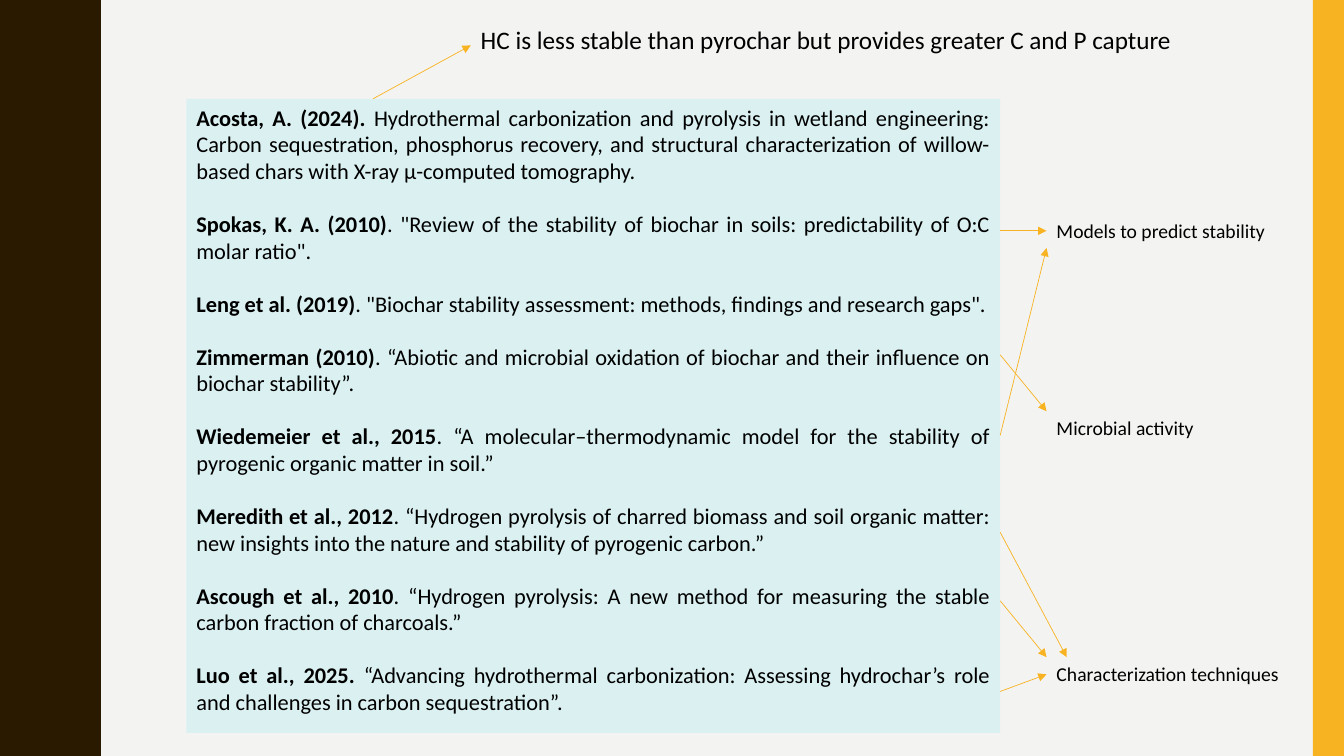
"""Build a slide of biochar stability references linked to their topics."""
from lxml.etree import SubElement
from pptx import Presentation
from pptx.dml.color import RGBColor
from pptx.enum.shapes import MSO_CONNECTOR, MSO_SHAPE
from pptx.enum.text import MSO_ANCHOR, PP_ALIGN
from pptx.oxml.ns import qn
from pptx.util import Inches, Pt

COLORS = {"back": "F3F3F2", "brown": "2A1A00", "gold": "F8B323",
          "panel": "DAF0F1", "text": "000000"}
REFS = [
    ("Acosta, A. (2024). ", "Hydrothermal carbonization and pyrolysis in wetland engineering: Carbon sequestration, phosphorus recovery, and structural characterization of willow-based chars with X-ray μ-computed tomography."),
    ("Spokas, K. A. (2010)", ". \"Review of the stability of biochar in soils: predictability of O:C molar ratio\"."),
    ("Leng et al. (2019)", ". \"Biochar stability assessment: methods, findings and research gaps\"."),
    ("Zimmerman (2010)", ". “Abiotic and microbial oxidation of biochar and their influence on biochar stability”."),
    ("Wiedemeier et al., 2015", ". “A molecular–thermodynamic model for the stability of pyrogenic organic matter in soil.”"),
    ("Meredith et al., 2012", ". “Hydrogen pyrolysis of charred biomass and soil organic matter: new insights into the nature and stability of pyrogenic carbon.”"),
    ("Ascough et al., 2010", ". “Hydrogen pyrolysis: A new method for measuring the stable carbon fraction of charcoals.”"),
    ("Luo et al., 2025. ", "“Advancing hydrothermal carbonization: Assessing hydrochar’s role and challenges in carbon sequestration”."),
]


def write(para, text, size=14, bold=False):
    run = para.add_run()
    run.text = text
    run.font.name = "Calibri"
    run.font.size = Pt(size)
    run.font.bold = bold
    run.font.color.rgb = RGBColor.from_string(COLORS["text"])


def paint(shape, color):
    shape.shadow.inherit = False
    shape.fill.solid()
    shape.fill.fore_color.rgb = RGBColor.from_string(COLORS[color])
    shape.line.fill.background()


deck = Presentation()
deck.slide_width, deck.slide_height = Inches(13.33), Inches(7.5)
slide = deck.slides.add_slide(deck.slide_layouts[6])
slide.background.fill.solid()
slide.background.fill.fore_color.rgb = RGBColor.from_string(COLORS["back"])
shapes = slide.shapes

rise = [(0.78, 0), (0.78, 0.07), (0.79, 0.14), (0.8, 0.2), (0.81, 0.25),
        (0.83, 0.29), (0.85, 0.33), (0.87, 0.38), (0.89, 0.42), (0.91, 0.46),
        (0.93, 0.5), (0.95, 0.55), (0.96, 0.61), (0.97, 0.68), (0.97, 0.75)]
fall = [(x, 1.5 - y) for x, y in rise[-2::-1]]
edge = [(x, y + 1.5 * turn) for turn in range(5) for x, y in rise + fall]
wave = shapes.build_freeform(0, 0, scale=Inches(1))
wave.add_line_segments(edge + [(0, 7.5)], close=True)
paint(wave.convert_to_shape(), "brown")

bar = shapes.add_shape(MSO_SHAPE.RECTANGLE, Inches(13.02), 0, Inches(0.31), Inches(7.5))
paint(bar, "gold")

panel = shapes.add_shape(MSO_SHAPE.RECTANGLE, Inches(1.85), Inches(0.98),
                         Inches(8.07), Inches(6.29))
paint(panel, "panel")
frame = panel.text_frame
frame.word_wrap = True
frame.vertical_anchor = MSO_ANCHOR.TOP
for i, (name, title) in enumerate(REFS):
    para = frame.add_paragraph() if i else frame.paragraphs[0]
    para.alignment = PP_ALIGN.JUSTIFY
    if i:
        para.space_before = Pt(18.5)
    write(para, name, size=16, bold=True)
    write(para, title, size=16)

for text, left, top, width, height, size, wrap in [
    ("HC is less stable than pyrochar but provides greater C and P capture",
     4.67, 0.19, 7.24, 0.4, 18, False),
    ("Models to predict stability", 10.38, 2.12, 3.35, 0.34, 14, True),
    ("Microbial activity", 10.38, 4.08, 3.35, 0.34, 14, True),
    ("Characterization techniques", 10.38, 6.52, 3.35, 0.34, 14, True),
]:
    box = shapes.add_textbox(Inches(left), Inches(top), Inches(width), Inches(height))
    box.text_frame.word_wrap = wrap
    write(box.text_frame.paragraphs[0], text, size=size)

for ends in [
    (3.7, 0.98, 4.67, 0.45),
    (9.92, 2.29, 10.38, 2.29),
    (9.92, 3.52, 10.38, 4.08),
    (9.92, 4.32, 10.38, 2.46),
    (9.92, 5.28, 10.58, 6.52),
    (9.92, 5.96, 10.38, 6.52),
    (9.92, 6.86, 10.38, 6.69),
]:
    arrow = shapes.add_connector(MSO_CONNECTOR.STRAIGHT, *map(Inches, ends))
    arrow.line.color.rgb = RGBColor.from_string(COLORS["gold"])
    arrow.line.width = Pt(0.5)
    SubElement(arrow.line._get_or_add_ln(), qn("a:tailEnd"), type="triangle")
    SubElement(arrow._element.spPr, qn("a:effectLst"))

deck.save("out.pptx")
